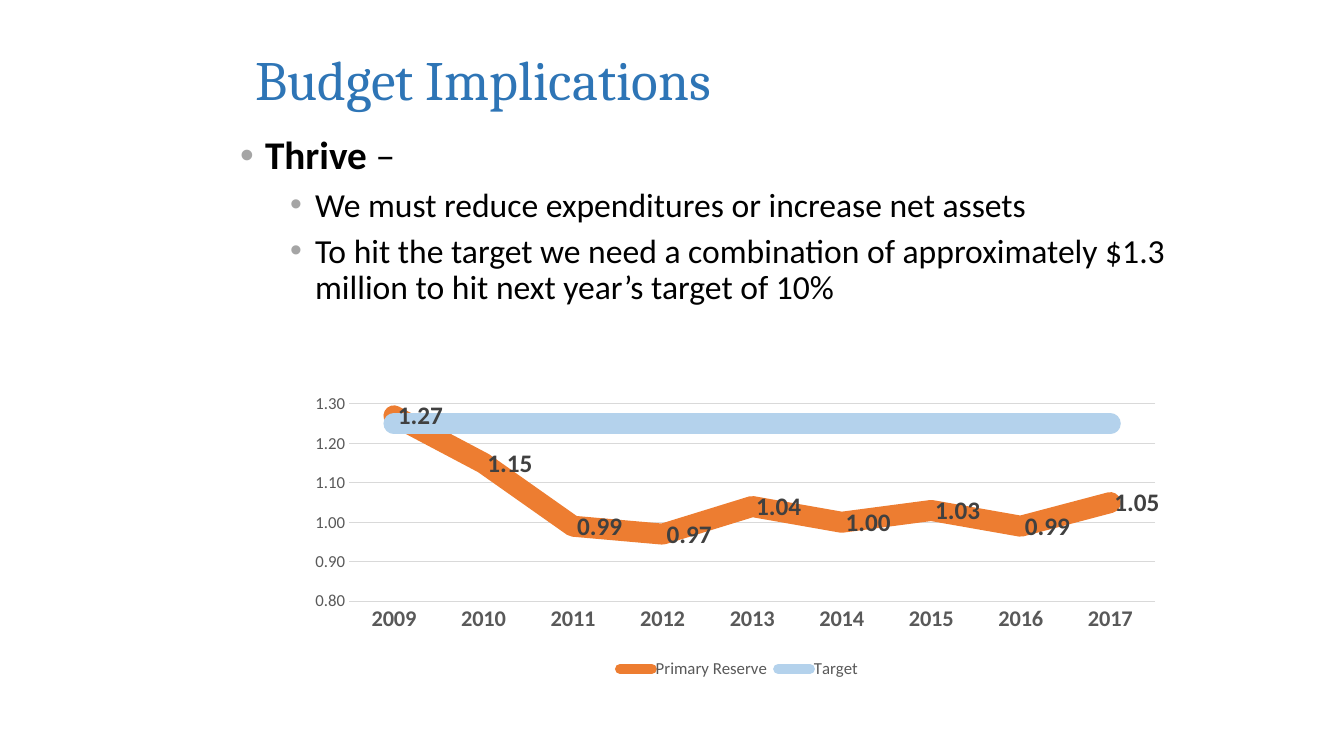
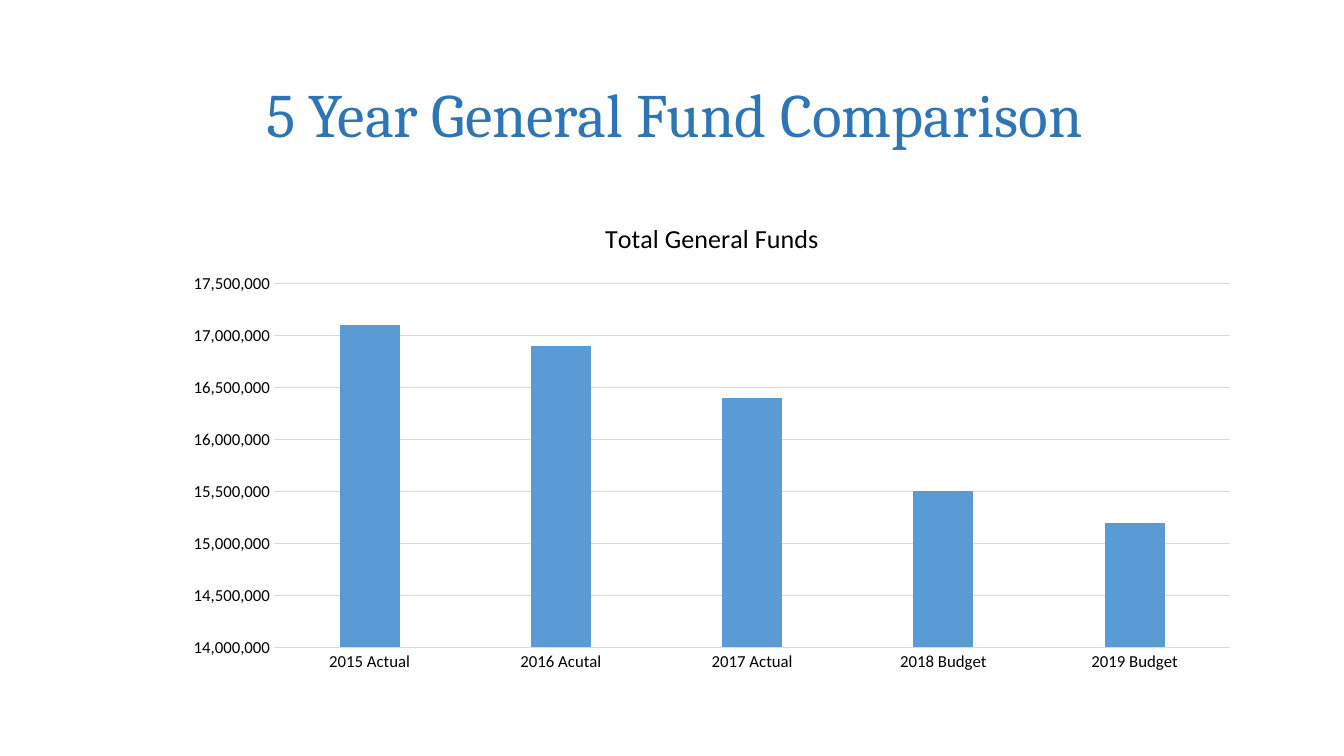
from lxml import etree
from pptx import Presentation
from pptx import util as u
from pptx.chart import data as cd
from pptx.dml.color import RGBColor
from pptx.enum import chart as ec
from pptx.enum import text as et
from pptx.oxml import parse_xml
from pptx.oxml.ns import nsdecls, qn

PX = 914400 / 100.8
COLORS = {"title": "2E75B6", "text": "000000", "bullet": "A5A5A5", "axis": "595959",
          "label": "404040", "grid": "D9D9D9", "reserve": "ED7D31", "target": "B4D2EC",
          "funds": "5B9BD5"}
HEAD, BODY = "Cambria", "Calibri"


def px(*lengths):
    return [u.Emu(round(n * PX)) for n in lengths]


def style(font, size, color, name=BODY, bold=False):
    font.size, font.name, font.bold = u.Pt(size), name, bold
    font.color.rgb = RGBColor.from_string(COLORS[color])


prs = Presentation()
prs.slide_width, prs.slide_height = px(1344, 756)

# Slides and their titles
slides = []
for layout, title, box, size in (
        (1, "Budget Implications", (245, 37, 515, 82), 39.6),
        (5, "5 Year General Fund Comparison", (256, 40, 996, 146), 44)):
    s = prs.slides.add_slide(prs.slide_layouts[layout])
    sp = s.shapes.title
    sp.left, sp.top, sp.width, sp.height = px(*box)
    tf = sp.text_frame
    tf.text = title
    tf.auto_size = et.MSO_AUTO_SIZE.NONE
    tf.vertical_anchor = et.MSO_ANCHOR.MIDDLE
    p = tf.paragraphs[0]
    p.alignment = et.PP_ALIGN.LEFT
    style(p.runs[0].font, size, "title", HEAD)
    slides.append(s)
budget, comparison = slides

# Bulleted list
sp = budget.placeholders[1]
sp.left, sp.top, sp.width, sp.height = px(230, 131, 948, 427)
tf = sp.text_frame
tf.auto_size = et.MSO_AUTO_SIZE.NONE
bullets = [
    (0, ["Thrive", " –"]),
    (1, ["We must reduce expenditures or increase net assets"]),
    (1, ["To hit the target we need a combination of approximately $1.3 million "
         "to hit next year’s target of 10%"]),
]
for i, (level, texts) in enumerate(bullets):
    p = tf.add_paragraph() if i else tf.paragraphs[0]
    p.level = level
    pPr = p._p.get_or_add_pPr()
    indent, = px(25)
    pPr.set("marL", str(indent * (3 if level else 1)))
    pPr.set("indent", str(-indent))
    clr = etree.SubElement(pPr, qn("a:buClr"))
    etree.SubElement(clr, qn("a:srgbClr"), val=COLORS["bullet"])
    etree.SubElement(pPr, qn("a:buFont"), typeface="Arial")
    etree.SubElement(pPr, qn("a:buChar"), char="•")
    p.line_spacing = 0.9
    p.space_before = u.Pt(7 if i else 0)
    for j, text in enumerate(texts):
        r = p.add_run()
        r.text = text
        style(r.font, 24 if level else 28, "text", bold=level == 0 and j == 0)

# Charts: data, then the axis style they share
reserve = cd.CategoryChartData(number_format="0.00")
reserve.categories = [str(year) for year in range(2009, 2018)]
reserve.add_series("Primary Reserve", [1.27, 1.15, 0.99, 0.97, 1.04, 1.00, 1.03, 0.99, 1.05])
reserve.add_series("Target", [1.25] * 9)

funds = cd.CategoryChartData(number_format="#,##0")
funds.categories = ["2015 Actual", "2016 Acutal", "2017 Actual", "2018 Budget", "2019 Budget"]
funds.add_series("Total General Funds", [17100000, 16900000, 16400000, 15500000, 15200000])

charts = []
for s, kind, data, box, scale, fmt, color, cat_size, cat_bold in (
        (budget, ec.XL_CHART_TYPE.LINE, reserve, (300, 394, 878, 289),
         (0.8, 1.3, 0.1), "0.00", "axis", 16, True),
        (comparison, ec.XL_CHART_TYPE.COLUMN_CLUSTERED, funds, (172, 201, 1080, 480),
         (14000000, 17500000, 500000), "#,##0", "text", 12, False)):
    chart = s.shapes.add_chart(kind, *px(*box), data).chart
    style(chart.font, 10, "text")
    chart.plots[0].vary_by_categories = False
    cat, val = chart.category_axis, chart.value_axis
    val.minimum_scale, val.maximum_scale, val.major_unit = scale
    val.has_major_gridlines = True
    val.tick_labels.number_format = fmt
    val.tick_labels.number_format_is_linked = False
    val.format.line.fill.background()
    for axis in (cat, val):
        axis.major_tick_mark = axis.minor_tick_mark = ec.XL_TICK_MARK.NONE
    for line in (cat.format.line, val.major_gridlines.format.line):
        line.width = u.Pt(0.75)
        line.color.rgb = RGBColor.from_string(COLORS["grid"])
    style(cat.tick_labels.font, cat_size, color, bold=cat_bold)
    style(val.tick_labels.font, 12, color)
    charts.append(chart)
line_chart, column_chart = charts

# Reserve chart: thick round lines, labels, legend, plot area
line_chart.has_title = False
line_chart.has_legend = True
line_chart.legend.position = ec.XL_LEGEND_POSITION.BOTTOM
line_chart.legend.include_in_layout = False
style(line_chart.legend.font, 12, "axis")
for series, color in zip(line_chart.plots[0].series, ("reserve", "target")):
    series.smooth = False
    series.marker.style = ec.XL_MARKER_STYLE.NONE
    series.format.line.width = u.Pt(15)
    series.format.line.color.rgb = RGBColor.from_string(COLORS[color])
    ln = series.format.line._get_or_add_ln()
    ln.set("cap", "rnd")
    etree.SubElement(ln, qn("a:round"))
labels = line_chart.plots[0].series[0].data_labels
labels.show_value = True
labels.position = ec.XL_LABEL_POSITION.RIGHT
labels.number_format = "0.00"
labels.number_format_is_linked = False
style(labels.font, 18, "label", bold=True)

plot_area = line_chart._chartSpace.chart.plotArea
for old in plot_area.findall(qn("c:layout")):
    plot_area.remove(old)
places = "".join(f'<c:{tag} val="{v}"/>' for tag, v in (
    ("layoutTarget", "inner"), ("xMode", "edge"), ("yMode", "edge"),
    ("x", 0.056), ("y", 0.034), ("w", 0.918), ("h", 0.683)))
plot_area.insert(0, parse_xml(
    f'<c:layout {nsdecls("c")}><c:manualLayout>{places}</c:manualLayout></c:layout>'))

# Funds chart: columns and chart title
column_chart.has_legend = False
column_chart.has_title = True
tf = column_chart.chart_title.text_frame
tf.text = "Total General Funds"
style(tf.paragraphs[0].runs[0].font, 18.6, "text")
column_chart.chart_title.include_in_layout = False
plot = column_chart.plots[0]
plot.gap_width, plot.overlap = 219, -27
fill = plot.series[0].format.fill
fill.solid()
fill.fore_color.rgb = RGBColor.from_string(COLORS["funds"])

prs.save("out.pptx")
